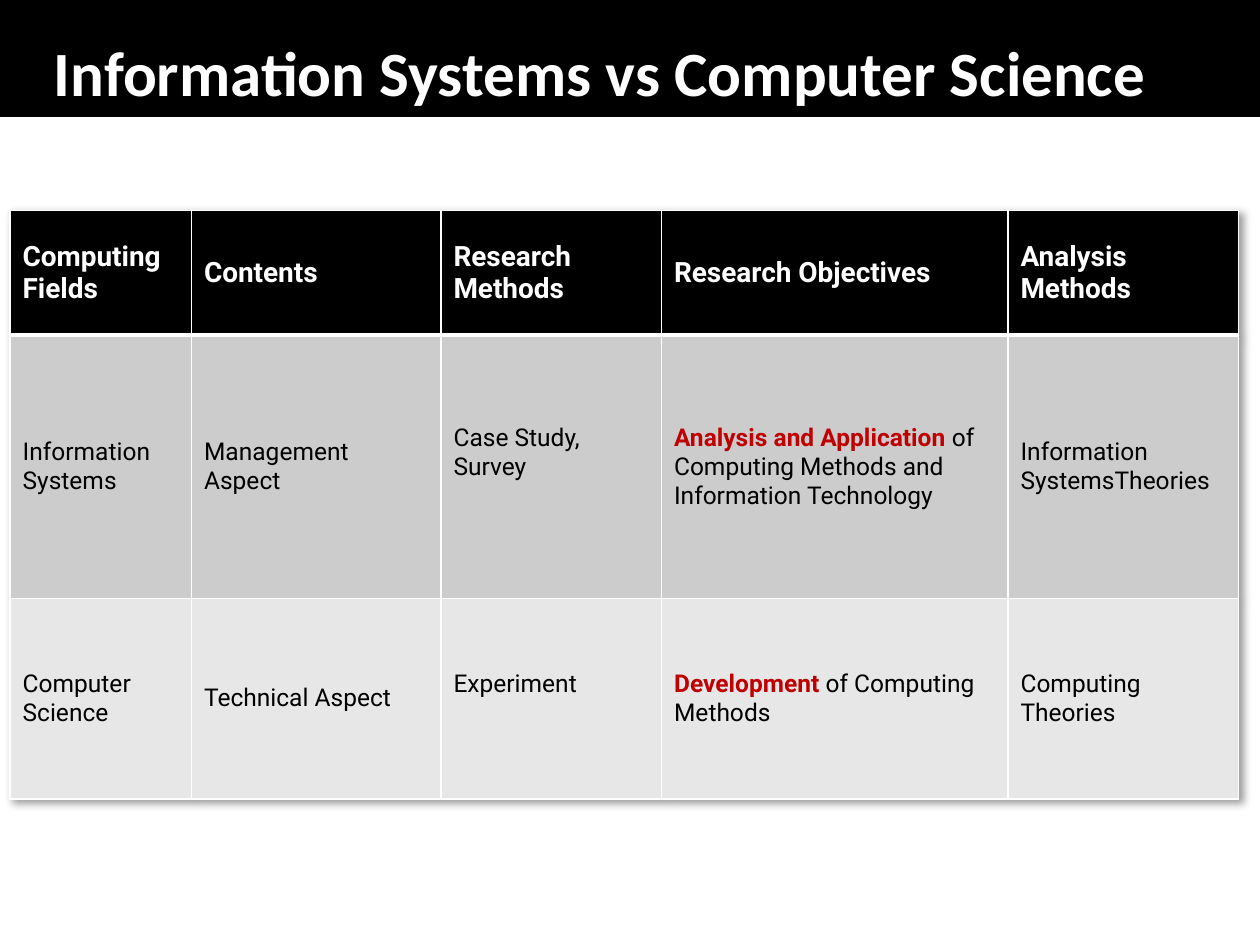
import pptx
import pptx.dml.color
import pptx.enum.shapes
import pptx.enum.text
import pptx.oxml
import pptx.oxml.ns
import pptx.util

RGBColor = pptx.dml.color.RGBColor
BLACK = RGBColor(0x00, 0x00, 0x00)
WHITE = RGBColor(0xFF, 0xFF, 0xFF)
RED = RGBColor(0xC0, 0x00, 0x00)
DARK_BAND = RGBColor(0xCC, 0xCC, 0xCC)
LIGHT_BAND = RGBColor(0xE7, 0xE7, 0xE7)

GRID_COLUMNS, GRID_ROWS = 100, 75
MIDDLE = pptx.enum.text.MSO_ANCHOR.MIDDLE
LEFT = pptx.enum.text.PP_ALIGN.LEFT

TITLE = {"name": "Calibri", "size": pptx.util.Pt(36), "bold": True, "color": WHITE}
HEADING = {"name": "Roboto", "size": pptx.util.Pt(16), "bold": True, "color": WHITE}
BODY = {"name": "Roboto", "size": pptx.util.Pt(14), "bold": False, "color": BLACK}
KEY = {**BODY, "bold": True, "color": RED}

HEADINGS = ["Computing Fields", "Contents", "Research Methods",
            "Research Objectives", "Analysis Methods"]
FIELDS = [
    ["Information Systems", "Management\vAspect", "Case Study, Survey",
     [("Analysis and Application ", KEY),
      ("of Computing Methods and Information Technology", BODY)],
     "Information SystemsTheories"],
    ["Computer Science", "Technical Aspect", "Experiment",
     [("Development ", KEY), ("of Computing Methods", BODY)],
     "Computing Theories"],
]
METHODS_COLUMN = HEADINGS.index("Research Methods")


class ComparisonSlide:
    def __init__(self, deck):
        self.column = deck.slide_width / GRID_COLUMNS
        self.row = deck.slide_height / GRID_ROWS
        self.slide = deck.slides.add_slide(deck.slide_layouts[6])

    def across(self, columns):
        return round(columns * self.column)

    def down(self, rows):
        return round(rows * self.row)

    def area(self, left, top, width, height):
        return self.across(left), self.down(top), self.across(width), self.down(height)

    def wording(self, frame, pieces):
        frame.word_wrap = True
        paragraph = frame.paragraphs[0]
        paragraph.alignment = LEFT
        for text, style in pieces:
            for index, line in enumerate(text.split("\v")):
                if index:
                    paragraph.add_line_break()
                run = paragraph.add_run()
                run.text = line
                for key, value in style.items():
                    if key == "color":
                        run.font.color.rgb = value
                    else:
                        setattr(run.font, key, value)

    def band(self, place, color):
        band = self.slide.shapes.add_shape(
            pptx.enum.shapes.MSO_SHAPE.RECTANGLE, *self.area(*place))
        band.shadow.inherit = False
        band.fill.solid()
        band.fill.fore_color.rgb = color
        band.line.color.rgb = color
        band.line.width = pptx.util.Pt(1)

    def title(self, place, text):
        frame = self.slide.shapes.add_textbox(*self.area(*place)).text_frame
        frame.vertical_anchor = MIDDLE
        self.wording(frame, [(text, TITLE)])

    def borders(self, cell, widths):
        properties = cell._tc.get_or_add_tcPr()
        for index, (side, width) in enumerate(widths.items()):
            properties.insert(index, pptx.oxml.parse_xml(
                f'<a:ln{side} {pptx.oxml.ns.nsdecls("a")} w="{pptx.util.Pt(width)}">'
                f'<a:solidFill><a:srgbClr val="{WHITE}"/></a:solidFill></a:ln{side}>'))

    def cell(self, cell, content, style, fill, top, bottom):
        cell.vertical_anchor = MIDDLE
        cell.fill.solid()
        cell.fill.fore_color.rgb = fill
        self.borders(cell, {"L": 1, "R": 1, "T": top, "B": bottom})
        pieces = [(content, style)] if isinstance(content, str) else content
        self.wording(cell.text_frame, pieces)

    def table(self, place, widths, heights, contents):
        table = self.slide.shapes.add_table(
            len(heights), len(widths), *self.area(*place)).table
        table.horz_banding = False
        table._tbl.tblPr.insert(0, pptx.oxml.parse_xml(
            f'<a:effectLst {pptx.oxml.ns.nsdecls("a")}>'
            '<a:outerShdw blurRad="50800" dist="38100" dir="2700000" algn="tl">'
            f'<a:srgbClr val="{BLACK}"><a:alpha val="40000"/></a:srgbClr>'
            '</a:outerShdw></a:effectLst>'))
        for column, width in zip(table.columns, widths):
            column.width = self.across(width)
        for row, height in zip(table.rows, heights):
            row.height = self.down(height)
        looks = [(HEADING, BLACK, 1, 3), (BODY, DARK_BAND, 3, 1), (BODY, LIGHT_BAND, 1, 1)]
        for row, entries, look in zip(table.rows, contents, looks):
            for cell, content in zip(row.cells, entries):
                self.cell(cell, content, *look)
        for row in list(table.rows)[1:]:
            row.cells[METHODS_COLUMN].margin_bottom = self.down(2.8)


def main():
    deck = pptx.Presentation()
    deck.slide_width = pptx.util.Inches(10)
    deck.slide_height = pptx.util.Inches(7.5)
    comparison = ComparisonSlide(deck)
    comparison.band((0, 0, GRID_COLUMNS, 9.2), BLACK)
    comparison.title((3.3, 2.2, 95, 7), "Information Systems vs Computer Science")
    comparison.table((0.8, 16.7, 97.5, 46.8), [14.4, 19.8, 17.5, 27.5, 18.3],
                     [9.9, 20.9, 15.9], [HEADINGS, *FIELDS])
    deck.save("out.pptx")


if __name__ == "__main__":
    main()
